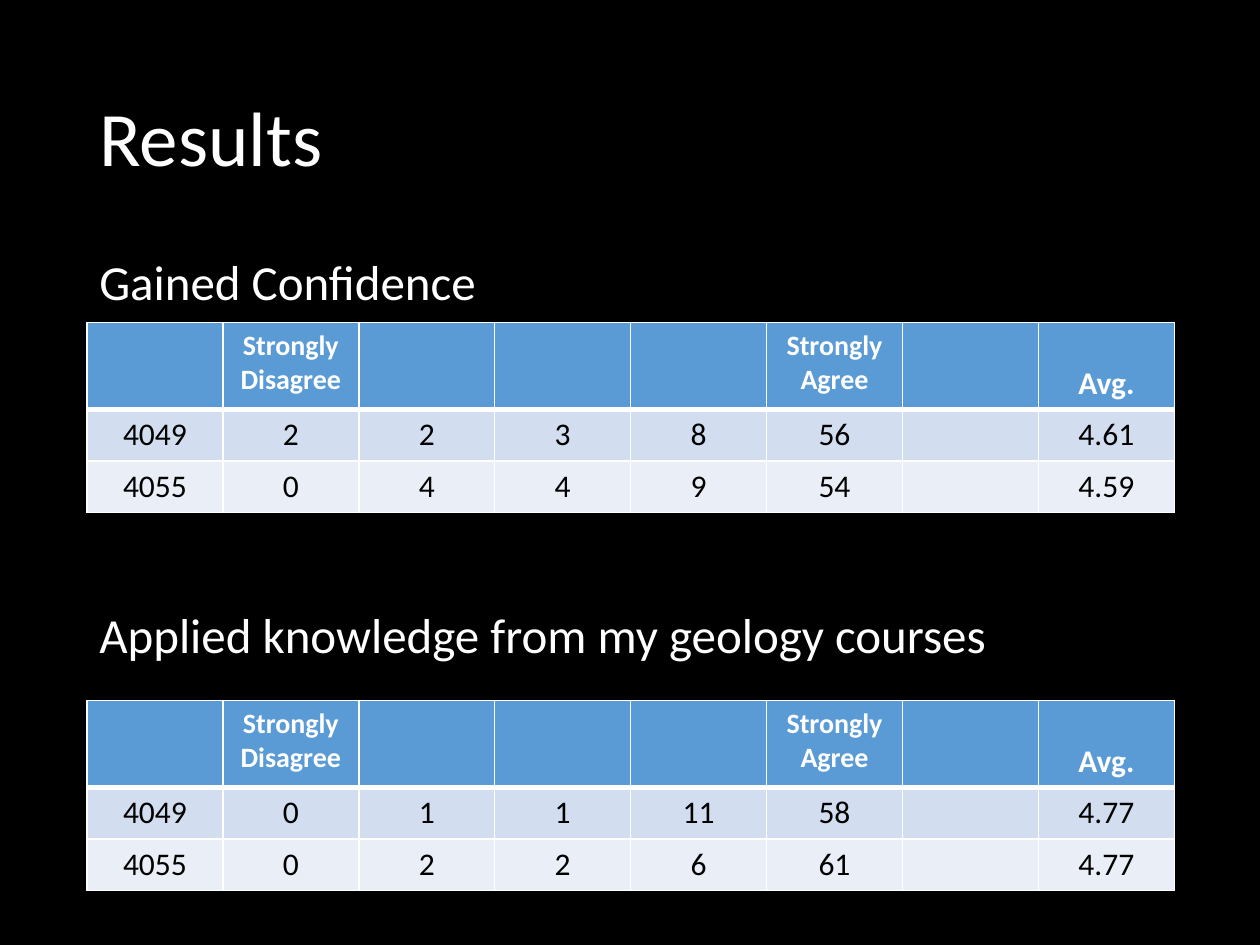
from lxml.etree import SubElement
from pptx import Presentation
from pptx.dml.color import RGBColor
from pptx.enum.text import MSO_ANCHOR, PP_ALIGN
from pptx.oxml.ns import qn
from pptx.util import Inches, Pt

WIDTH, HEIGHT = 10, 7.5
LEFT, SPAN = 0.69, 8.63
HEADER_HEIGHT, ROW_HEIGHT = 0.69, 0.41
HEADER = ["", "Strongly Disagree", "", "", "", "Strongly Agree", "", "Avg."]
ROW_FILLS = ["5B9BD5", "D2DEEF", "EAEFF7"]
SECTIONS = [
    ("Gained Confidence", 2, 2.56, [
        ["4049", "2", "2", "3", "8", "56", "", "4.61"],
        ["4055", "0", "4", "4", "9", "54", "", "4.59"],
    ]),
    ("Applied knowledge from my geology courses", 4.8, 5.56, [
        ["4049", "0", "1", "1", "11", "58", "", "4.77"],
        ["4055", "0", "2", "2", "6", "61", "", "4.77"],
    ]),
]


def color(value):
    return RGBColor.from_string(value)


def style_text(para, size, shade, bold=False):
    para.font.size = Pt(size)
    for span in para.runs:
        span.font.name = "Calibri"
        span.font.size = Pt(size)
        span.font.bold = bold
        span.font.color.rgb = color(shade)


def add_heading(page, box, text, size):
    frame = page.shapes.add_textbox(*map(Inches, box)).text_frame
    frame.word_wrap = True
    frame.vertical_anchor = MSO_ANCHOR.MIDDLE
    frame.text = text
    para = frame.paragraphs[0]
    para.line_spacing = 0.9
    style_text(para, size, "FFFFFF")


def set_borders(cell, top, bottom):
    properties = cell._tc.get_or_add_tcPr()
    for side, points in (("L", 1), ("R", 1), ("T", top), ("B", bottom)):
        line = SubElement(properties, qn(f"a:ln{side}"), w=str(Pt(points)))
        fill = SubElement(line, qn("a:solidFill"))
        SubElement(fill, qn("a:srgbClr"), val="FFFFFF")


def style_cell(cell, text, row):
    is_header = row == 0
    set_borders(cell, 3 if row == 1 else 1, 3 if is_header else 1)
    cell.fill.solid()
    cell.fill.fore_color.rgb = color(ROW_FILLS[row])
    cell.text = text
    if text == "Avg.":
        cell.vertical_anchor = MSO_ANCHOR.BOTTOM
    size = 16 if is_header and text != "Avg." else 18
    para = cell.text_frame.paragraphs[0]
    para.alignment = PP_ALIGN.CENTER
    style_text(para, size, "FFFFFF" if is_header else "000000", is_header)


def add_ratings(page, box, rows):
    table = page.shapes.add_table(len(rows), len(rows[0]), *map(Inches, box)).table
    for column in table.columns:
        column.width = Inches(box[2] / len(rows[0]))
    for row, values in enumerate(rows):
        table.rows[row].height = Inches(ROW_HEIGHT if row else HEADER_HEIGHT)
        for column, text in enumerate(values):
            style_cell(table.cell(row, column), text, row)


def add_section(page, heading, heading_top, table_top, results):
    add_heading(page, (LEFT, heading_top, SPAN, 0.52), heading, 28)
    table_height = HEADER_HEIGHT + ROW_HEIGHT * len(results)
    add_ratings(page, (LEFT, table_top, SPAN, table_height), [HEADER, *results])


def main():
    deck = Presentation()
    deck.slide_width, deck.slide_height = Inches(WIDTH), Inches(HEIGHT)
    page = deck.slides.add_slide(deck.slide_layouts[6])
    page.background.fill.solid()
    page.background.fill.fore_color.rgb = color("000000")
    add_heading(page, (LEFT, 0.4, SPAN, 1.45), "Results", 44)
    for section in SECTIONS:
        add_section(page, *section)
    deck.save("out.pptx")


if __name__ == "__main__":
    main()
